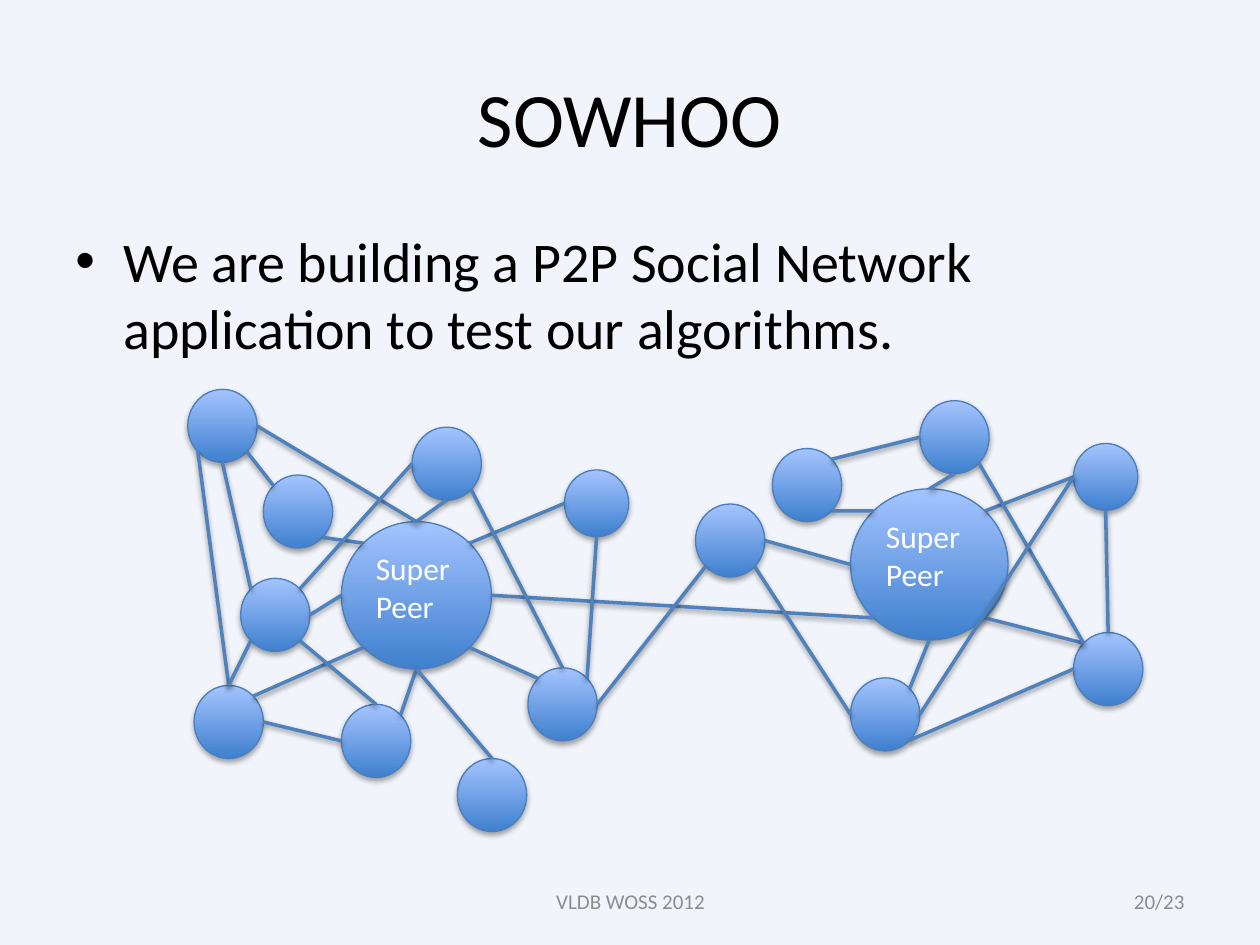
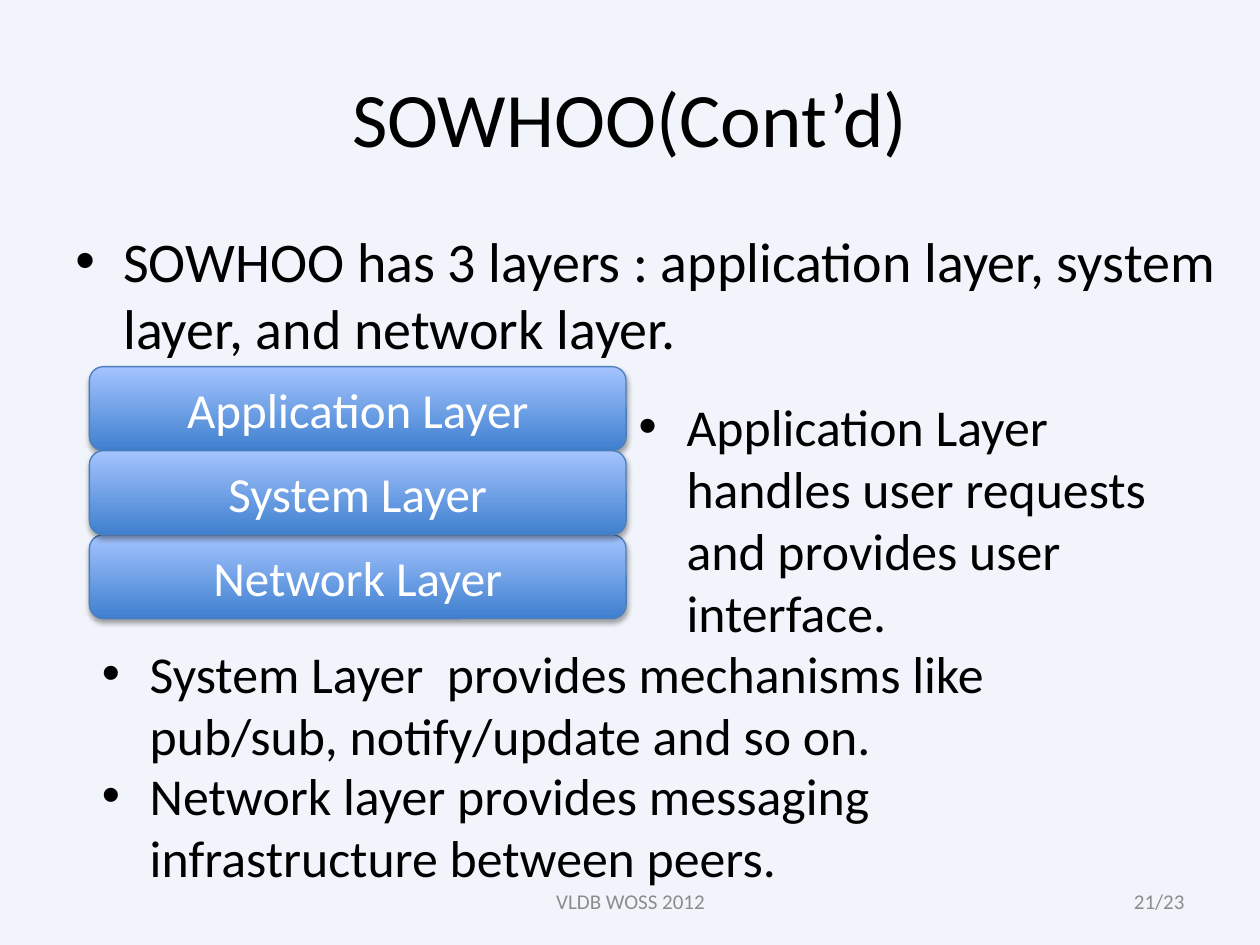
from math import cos, radians, sin

from lxml import etree
from pptx import Presentation
from pptx.dml.color import RGBColor
from pptx.enum.shapes import MSO_CONNECTOR, MSO_SHAPE
from pptx.enum.text import MSO_ANCHOR, PP_ALIGN
from pptx.oxml.ns import qn
from pptx.util import Inches, Pt

OVAL, ROUNDED = MSO_SHAPE.OVAL, MSO_SHAPE.ROUNDED_RECTANGLE
STRAIGHT = MSO_CONNECTOR.STRAIGHT
LEFT, CENTER, RIGHT = PP_ALIGN.LEFT, PP_ALIGN.CENTER, PP_ALIGN.RIGHT
TOP, MIDDLE = MSO_ANCHOR.TOP, MSO_ANCHOR.MIDDLE

BACKGROUND = RGBColor(0xF1, 0xF5, 0xFB)
BLACK = RGBColor(0x00, 0x00, 0x00)
WHITE = RGBColor(0xFF, 0xFF, 0xFF)
GREY = RGBColor(0x8C, 0x8C, 0x8C)
DEEP_BLUE = RGBColor(0x3F, 0x80, 0xCE)
PALE_BLUE = RGBColor(0xA4, 0xC4, 0xFF)
OUTLINE = RGBColor(0x4B, 0x7E, 0xBC)
LINK_BLUE = RGBColor(0x4F, 0x81, 0xBD)

FONT = "Calibri"
TITLE = {"size": Pt(44), "color": BLACK}
BODY = {"size": Pt(32), "color": BLACK}
DETAIL = {"size": Pt(29.6), "color": BLACK}
LAYER = {"size": Pt(28), "color": WHITE}
SUPER_PEER = {"size": Pt(18), "color": WHITE}
FOOTER = {"size": Pt(12), "color": GREY}
PAGE_TOTAL = 23

PEER_SIZE = (0.55, 0.58)
SMALL_PEER_SIZE = (0.51, 0.53)
# Offsets inside the network box; A-I belong to hub W, J-O to hub X.
PEERS = {
    "A": (0, 0), "B": (0.6, 0.68), "C": (0.42, 1.5), "D": (0.05, 2.35),
    "E": (1.22, 2.5), "F": (2.14, 2.93), "G": (2.7, 2.21), "H": (1.78, 0.3),
    "J": (4.03, 0.91), "K": (4.64, 0.47), "L": (5.81, 0.09),
    "N": (7.03, 1.93), "O": (5.26, 2.29),
}
SMALL_PEERS = {"I": (2.99, 0.64), "M": (7.03, 0.43)}
HUBS = {"W": (1.22, 1.05, 1.19, 1.17), "X": (5.26, 0.79, 1.25, 1.2)}
# Each link names a peer and its side, then the other peer and its side.
LINKS = [
    "H S W N", "W SE G NW", "W NE I W", "W S E NE", "C E W W", "B SE W NW",
    "L S X N", "X SE N NW", "X NE M W", "X S O NE", "J E X W", "K SE X NW",
    "A E W N", "W SW D NE", "W S F N", "X SW W E", "A SE B NW", "C NE H W",
    "H SE G N", "I S G NE", "A S C NW", "C SE E N", "E W D E", "A SW D N",
    "C SW D N", "G E J SW", "K NE L W", "L SE N NW", "M W O E", "M S N N",
    "N W O SE", "J SE O W",
]
SIDES = ["E", "SE", "S", "SW", "W", "NW", "N", "NE"]


def inches(values):
    return [Inches(value) for value in values]


def write(shape, text, style, align=LEFT, anchor=TOP):
    frame = shape.text_frame
    frame.word_wrap = True
    frame.vertical_anchor = anchor
    para = frame.paragraphs[0]
    para.alignment = align
    span = para.add_run()
    span.text = text
    span.font.color.rgb = style["color"]
    for name, value in {"name": FONT, "size": style["size"]}.items():
        setattr(span.font, name, value)
    return para


def add_text(page, box, text, style, align=LEFT, anchor=TOP):
    return write(page.shapes.add_textbox(*inches(box)), text, style, align, anchor)


def add_bullet(page, box, text, style):
    props = add_text(page, box, text, style)._p.get_or_add_pPr()
    props.set("marL", str(Inches(0.38)))
    props.set("indent", str(Inches(-0.38)))
    before = etree.SubElement(props, qn("a:spcBef"))
    etree.SubElement(before, qn("a:spcPct"), val="20000")
    etree.SubElement(props, qn("a:buFont"), typeface="Arial")
    etree.SubElement(props, qn("a:buChar"), char="•")


def add_shadow(item, distance, opacity):
    """Cast a soft shadow straight down; fill and line must be set first."""
    effects = etree.SubElement(item._element.spPr, qn("a:effectLst"))
    shadow = etree.SubElement(
        effects, qn("a:outerShdw"), blurRad=str(Pt(3.1)),
        dist=str(Pt(distance)), dir="5400000", rotWithShape="0")
    color = etree.SubElement(shadow, qn("a:srgbClr"), val=str(BLACK))
    etree.SubElement(color, qn("a:alpha"), val=str(opacity * 1000))


def add_glossy(shapes, kind, box):
    shape = shapes.add_shape(kind, *inches(box))
    shape.fill.gradient()
    shape.fill.gradient_angle = 90
    for stop, color in zip(shape.fill.gradient_stops, (DEEP_BLUE, PALE_BLUE)):
        stop.color.rgb = color
    shape.line.color.rgb = OUTLINE
    shape.line.width = Pt(0.75)
    add_shadow(shape, 1.8, 35)
    return shape


def rim_point(box, side):
    """Point on the ellipse in the box, at one of eight compass sides."""
    left, top, width, height = box
    angle = radians(45 * SIDES.index(side))
    return (left + width / 2 * (1 + cos(angle)),
            top + height / 2 * (1 + sin(angle)))


def add_link(page, start, end):
    link = page.shapes.add_connector(STRAIGHT, *inches(start + end))
    link.line.color.rgb = LINK_BLUE
    link.line.width = Pt(2)
    add_shadow(link, 1.6, 38)


def add_network(page, left, top):
    spots = {name: spot + PEER_SIZE for name, spot in PEERS.items()}
    spots.update({name: spot + SMALL_PEER_SIZE for name, spot in SMALL_PEERS.items()})
    spots.update(HUBS)
    boxes = {name: (left + x, top + y, width, height)
             for name, (x, y, width, height) in spots.items()}
    for name, box in boxes.items():
        peer = add_glossy(page.shapes, OVAL, box)
        if name in HUBS:
            write(peer, "Super Peer", SUPER_PEER)
    for link in LINKS:
        first, first_side, second, second_side = link.split()
        add_link(page, rim_point(boxes[first], first_side),
                 rim_point(boxes[second], second_side))


def add_layer_stack(page, left, top, width, height):
    group = page.shapes.add_group_shape()
    names = ["Application Layer", "System Layer", "Network Layer"]
    step = height / len(names)
    for row in (2, 0, 1):
        layer = add_glossy(group.shapes, ROUNDED, (left, top + row * step, width, step))
        write(layer, names[row], LAYER, CENTER, MIDDLE)


def add_page(deck, title, number):
    page = deck.slides.add_slide(deck.slide_layouts[6])
    page.background.fill.solid()
    page.background.fill.fore_color.rgb = BACKGROUND
    add_text(page, (0.5, 0.3, 9, 1.25), title, TITLE, CENTER, MIDDLE)
    add_text(page, (3.42, 6.95, 3.17, 0.4), "VLDB WOSS 2012", FOOTER, CENTER, MIDDLE)
    add_text(page, (7.17, 6.95, 2.33, 0.4), f"{number}/{PAGE_TOTAL}", FOOTER, RIGHT, MIDDLE)
    return page


def build_network_page(deck):
    page = add_page(deck, "SOWHOO", 20)
    add_bullet(page, (0.5, 1.75, 9, 1.29),
               "We are building a P2P Social Network application to test our algorithms.", BODY)
    add_network(page, 1.49, 3.09)


def build_layers_page(deck):
    page = add_page(deck, "SOWHOO(Cont’d)", 21)
    add_bullet(page, (0.5, 1.75, 9.25, 1.34),
               "SOWHOO has 3 layers : application layer, system layer, and network layer.", BODY)
    add_layer_stack(page, 0.71, 2.91, 4.26, 2)
    details = [
        ((4.97, 3.08, 4.78, 1.81),
         "Application Layer handles user requests and provides user interface."),
        ((0.71, 5.04, 8.66, 0.97),
         "System Layer  provides mechanisms like pub/sub, notify/update and so on."),
        ((0.71, 6.01, 8.66, 0.97),
         "Network layer provides messaging infrastructure between peers."),
    ]
    for box, text in details:
        add_bullet(page, box, text, DETAIL)


def main():
    deck = Presentation()
    deck.slide_width, deck.slide_height = Inches(10), Inches(7.5)
    build_network_page(deck)
    build_layers_page(deck)
    deck.save("out.pptx")


if __name__ == "__main__":
    main()
